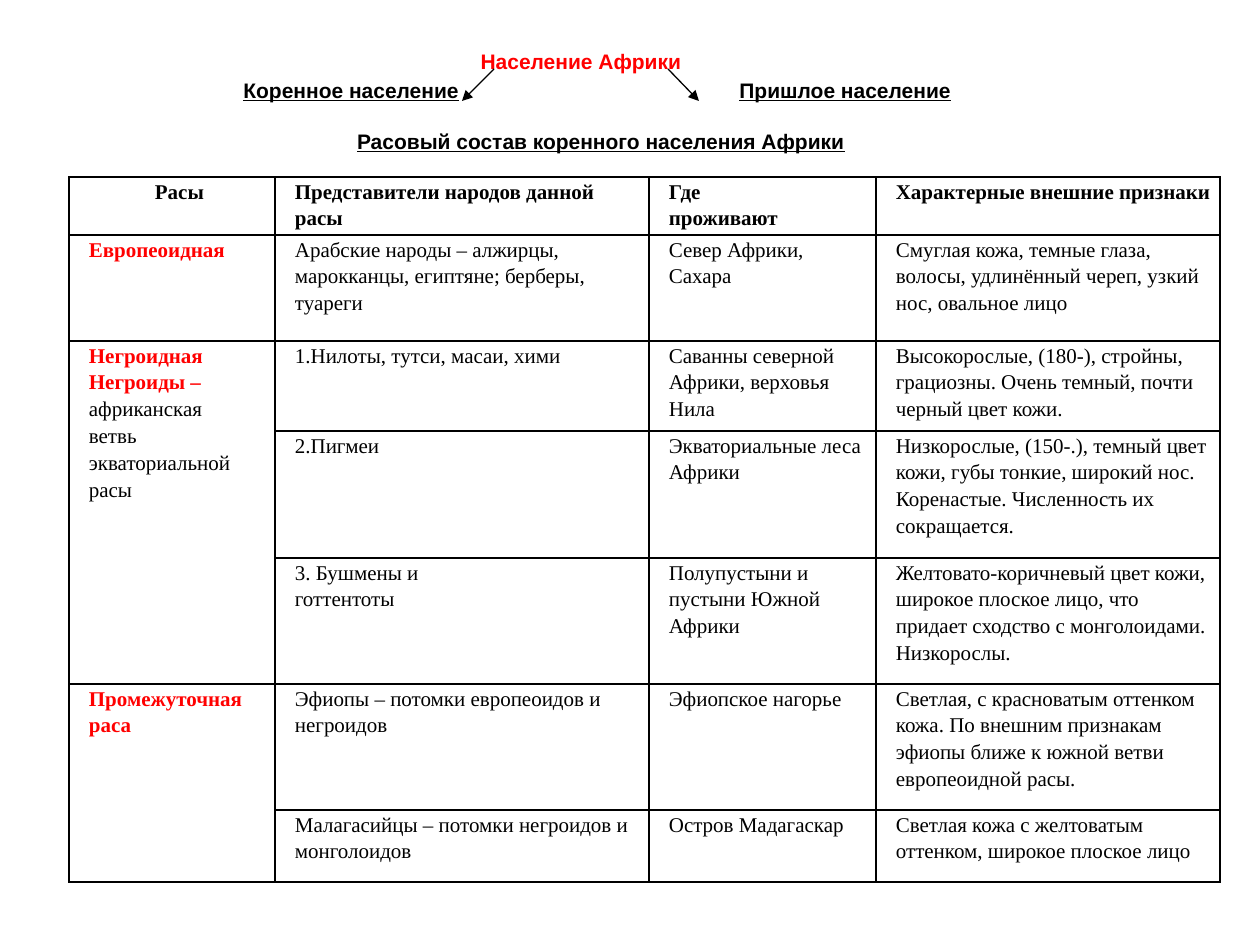
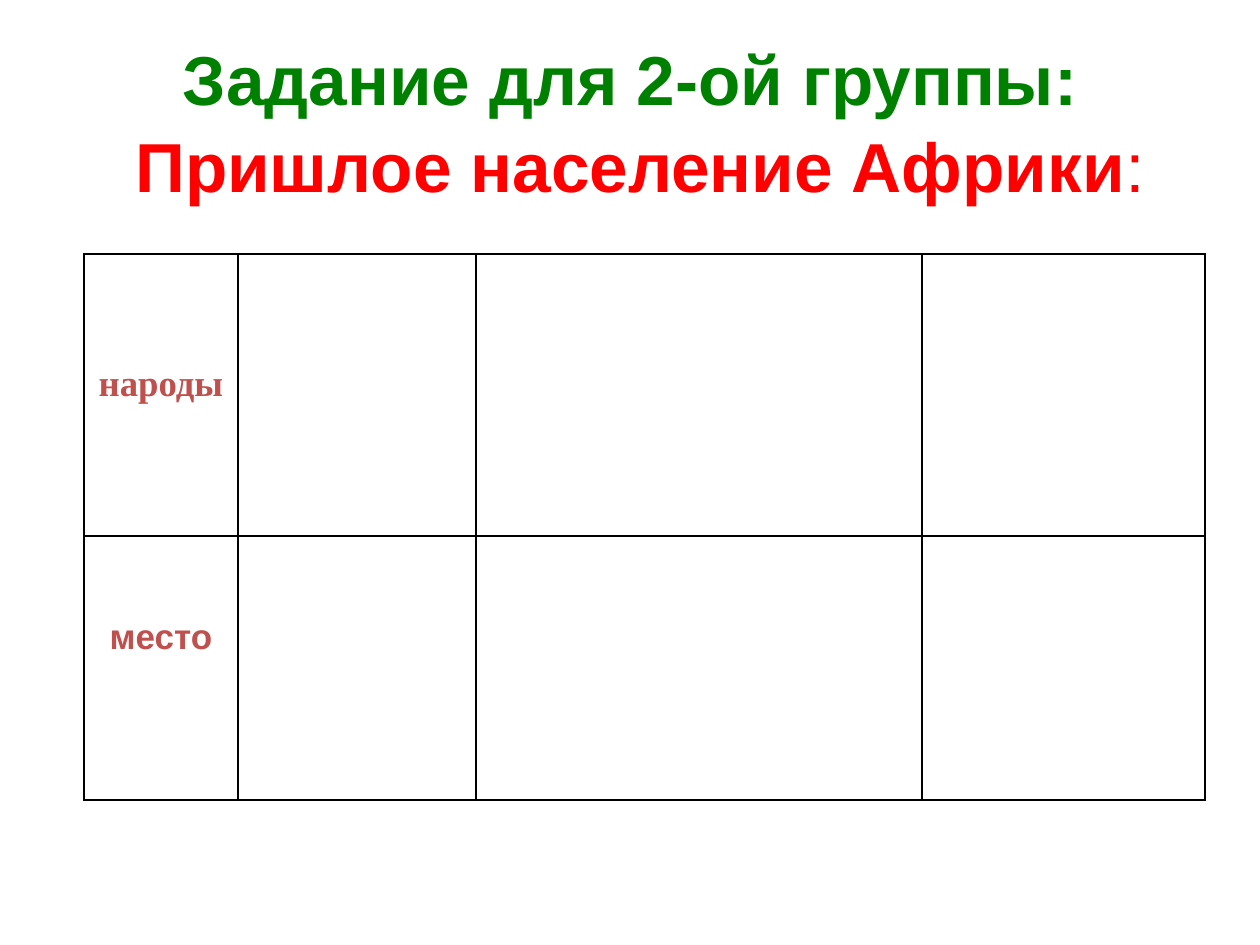
from lxml import etree
from pptx import Presentation
from pptx.dml.color import RGBColor
from pptx.enum.shapes import MSO_CONNECTOR
from pptx.enum.text import MSO_ANCHOR, PP_ALIGN
from pptx.oxml.ns import qn
from pptx.util import Emu, Pt

LEFT, CENTER = PP_ALIGN.LEFT, PP_ALIGN.CENTER
TOP, MIDDLE = MSO_ANCHOR.TOP, MSO_ANCHOR.MIDDLE
STRAIGHT = MSO_CONNECTOR.STRAIGHT
SCALE = 914400 / 126

COLORS = {"black": "000000", "red": "FF0000", "green": "008000", "brick": "C0504D"}
SERIF, SANS = "Times New Roman", "Arial"

# Text styles: font, size, colour, bold, underline
STYLES = {
    "cell": (SERIF, 12, "black", False, False),
    "head": (SERIF, 12, "black", True, False),
    "race": (SERIF, 12, "red", True, False),
    "topic": (SANS, 12, "red", True, False),
    "branch": (SANS, 12, "black", True, True),
    "gap": (SANS, 12, "black", True, False),
    "task": (SANS, 39.6, "green", True, False),
    "subject": (SANS, 39.6, "red", True, False),
    "colon": (SANS, 39.6, "red", False, False),
    "peoples": (SERIF, 21, "brick", True, False),
    "place": (SANS, 20, "brick", True, False),
}

# Slide 1: a paragraph is a list of (text, style) runs, a cell a list of paragraphs
TOPIC = [("Население Африки", "topic")]
BRANCHES = [("Коренное население", "branch"), ("\t", "gap"), ("Пришлое население", "branch")]
TABLE_TITLE = [("Расовый состав коренного населения Африки", "branch")]
ARROWS = [(494, 69, 462, 101), (668, 69, 699, 101)]

RACE_HEADS = [["Расы"], ["Представители народов данной расы"], ["Где", "проживают"],
              ["Характерные внешние признаки"]]
RACES = [
    ([[("Европеоидная", "race")]], [
        (["Арабские народы – алжирцы, марокканцы, египтяне; берберы, туареги"],
         ["Север Африки, Сахара"],
         ["Смуглая кожа, темные глаза, волосы, удлинённый череп, узкий нос, овальное лицо"]),
    ]),
    ([[("Негроидная", "race")],
      [("Негроиды – ", "race"), ("африканская", "cell")],
      [("ветвь экваториальной расы", "cell")]], [
        (["1.Нилоты, тутси, масаи, хими"],
         ["Саванны северной Африки, верховья Нила"],
         ["Высокорослые, (180-), стройны, грациозны. Очень темный, почти черный цвет кожи."]),
        (["2.Пигмеи"],
         ["Экваториальные леса Африки"],
         ["Низкорослые, (150-.), темный цвет кожи, губы тонкие, широкий нос. "
          "Коренастые. Численность их сокращается."]),
        (["3. Бушмены и", "готтентоты"],
         ["Полупустыни и пустыни Южной Африки"],
         ["Желтовато-коричневый цвет кожи, широкое плоское лицо, что придает "
          "сходство с монголоидами. Низкорослы."]),
    ]),
    ([[("Промежуточная", "race")], [("раса", "race")]], [
        (["Эфиопы – потомки европеоидов и негроидов"],
         ["Эфиопское нагорье"],
         ["Светлая, с красноватым оттенком кожа. По внешним признакам эфиопы "
          "ближе к южной ветви европеоидной расы."]),
        (["Малагасийцы – потомки негроидов и монголоидов"],
         ["Остров Мадагаскар"],
         ["Светлая кожа с желтоватым оттенком, широкое плоское лицо"]),
    ]),
]
RACE_COLUMNS = [206, 374, 227, 344]
RACE_ROWS = [58, 106, 90, 127, 126, 126, 72]

# Slide 2
TASK_TITLE = [[("Задание для 2-ой группы: ", "task")],
              [("Пришлое население Африки", "subject"), (":", "colon")]]
TASK_COLUMNS = [154, 238, 446, 283]
TASK_ROWS = [282, 264]
# Label, style, distance from the top of its cell
TASK_LABELS = [("народы", "peoples", 110), ("место", "place", 82)]


def px(value):
    return Emu(round(value * SCALE))


def add_runs(para, runs, align=LEFT):
    para.alignment = align
    for text, style in runs:
        name, size, color, bold, underline = STYLES[style]
        span = para.add_run()
        span.text = text
        font = span.font
        font.name, font.size, font.bold, font.underline = name, Pt(size), bold, underline
        font.color.rgb = RGBColor.from_string(COLORS[color])


def paragraphs(frame, count):
    return [frame.paragraphs[0]] + [frame.add_paragraph() for _ in range(count - 1)]


def add_box(page, left, top, width, height, lines, anchor=TOP):
    box = page.shapes.add_textbox(px(left), px(top), px(width), px(height))
    frame = box.text_frame
    frame.word_wrap = True
    frame.vertical_anchor = anchor
    paras = paragraphs(frame, len(lines))
    for para, runs in zip(paras, lines):
        add_runs(para, runs, CENTER)
    return paras


def add_arrow(page, x1, y1, x2, y2):
    arrow = page.shapes.add_connector(STRAIGHT, px(x1), px(y1), px(x2), px(y2))
    arrow.line.width = Pt(0.75)
    arrow.line.color.rgb = RGBColor.from_string(COLORS["black"])
    etree.SubElement(arrow.line._get_or_add_ln(), qn("a:tailEnd"), type="triangle")
    etree.SubElement(arrow._element.spPr, qn("a:effectLst"))


def frame_cell(cell):
    properties = cell._tc.get_or_add_tcPr()
    for side in ("a:lnL", "a:lnR", "a:lnT", "a:lnB"):
        border = etree.SubElement(properties, qn(side), w=str(Pt(1)))
        fill = etree.SubElement(border, qn("a:solidFill"))
        etree.SubElement(fill, qn("a:srgbClr"), val=COLORS["black"])
    cell.fill.background()


def add_grid(page, left, top, columns, rows):
    table = page.shapes.add_table(len(rows), len(columns), px(left), px(top),
                                  px(sum(columns)), px(sum(rows))).table
    table.first_row = table.horz_banding = False
    for column, width in zip(table.columns, columns):
        column.width = px(width)
    for row, height in zip(table.rows, rows):
        row.height = px(height)
        for cell in row.cells:
            frame_cell(cell)
    return table


def fill_cell(cell, lines, align=LEFT):
    cell.margin_left = cell.margin_right = px(5)
    cell.margin_top = cell.margin_bottom = 0
    for para, runs in zip(paragraphs(cell.text_frame, len(lines)), lines):
        para._p.get_or_add_pPr().set("marL", str(px(15)))
        para.line_spacing = 1.15
        add_runs(para, runs, align)


def styled(lines, style):
    return [[(line, style)] for line in lines]


def build_races(page):
    # Heading with two branches
    add_box(page, 456, 42, 250, 36, [TOPIC])
    branches, title = add_box(page, 231, 71, 740, 88, [BRANCHES, TABLE_TITLE])
    branches.alignment = LEFT
    stops = etree.SubElement(branches._p.get_or_add_pPr(), qn("a:tabLst"))
    etree.SubElement(stops, qn("a:tab"), pos=str(px(496)), algn="l")
    title.space_before = Pt(15)
    for ends in ARROWS:
        add_arrow(page, *ends)

    # Table: each race spans the rows of its peoples
    table = add_grid(page, 69, 177, RACE_COLUMNS, RACE_ROWS)
    for column, lines in enumerate(RACE_HEADS):
        fill_cell(table.cell(0, column), styled(lines, "head"), LEFT if column else CENTER)
    row = 1
    for race, peoples in RACES:
        last = row + len(peoples) - 1
        if last > row:
            table.cell(row, 0).merge(table.cell(last, 0))
        fill_cell(table.cell(row, 0), race)
        for offset, people in enumerate(peoples):
            for column, lines in enumerate(people, start=1):
                fill_cell(table.cell(row + offset, column), styled(lines, "cell"))
        row = last + 1


def build_task(page):
    title = add_box(page, 94, 43, 1092, 157, TASK_TITLE, MIDDLE)
    title[1].space_before = Pt(2)
    table = add_grid(page, 84, 254, TASK_COLUMNS, TASK_ROWS)
    for row, (text, style, drop) in enumerate(TASK_LABELS):
        cell = table.cell(row, 0)
        cell.margin_top = px(drop)
        add_runs(cell.text_frame.paragraphs[0], [(text, style)], CENTER)


def main():
    deck = Presentation()
    deck.slide_width, deck.slide_height = px(1260), px(945)
    for build in (build_races, build_task):
        build(deck.slides.add_slide(deck.slide_layouts[6]))
    deck.save("out.pptx")


if __name__ == "__main__":
    main()
